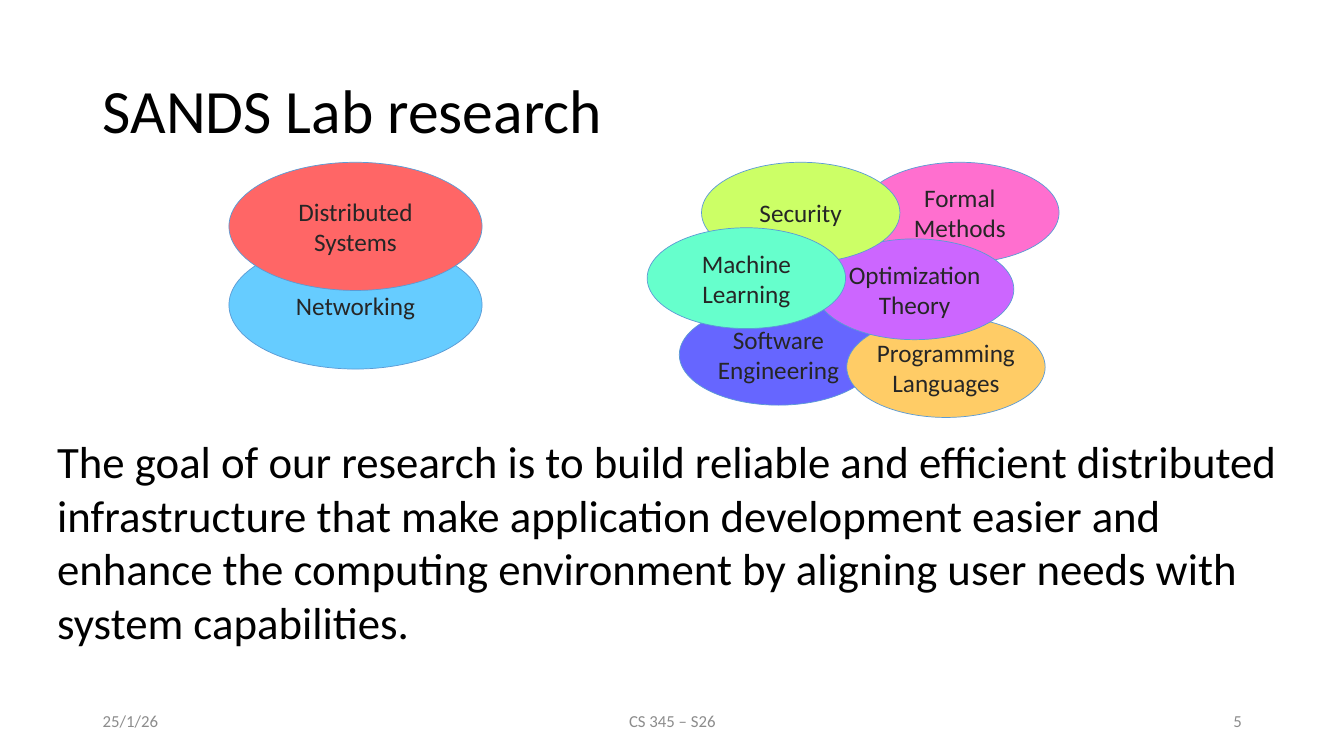
from pptx import Presentation
from pptx.dml.color import RGBColor
from pptx.enum.shapes import MSO_SHAPE as Shape
from pptx.enum.text import MSO_ANCHOR as Anchor, MSO_AUTO_SIZE as AutoSize, PP_ALIGN as Align
from pptx.util import Cm, Pt

BLACK = RGBColor(0x00, 0x00, 0x00)
CHARCOAL = RGBColor(0x26, 0x26, 0x26)
GREY = RGBColor(0x8C, 0x8C, 0x8C)
OUTLINE = RGBColor(0x5B, 0x9B, 0xD5)
INDIGO = RGBColor(0x66, 0x66, 0xFF)
SKY = RGBColor(0x66, 0xCC, 0xFF)
PINK = RGBColor(0xFF, 0x6F, 0xCF)
ORANGE = RGBColor(0xFF, 0xCC, 0x66)
PURPLE = RGBColor(0xCC, 0x66, 0xFF)
LIME = RGBColor(0xCC, 0xFF, 0x66)
MINT = RGBColor(0x66, 0xFF, 0xCC)
RED = RGBColor(0xFF, 0x66, 0x66)

deck = Presentation()
deck.slide_width, deck.slide_height = Cm(33.87), Cm(19.05)
page = deck.slides.add_slide(deck.slide_layouts[6])


def write(box, text, size, color, align, frame_format):
    frame = box.text_frame
    for name, value in {"word_wrap": True, **frame_format}.items():
        setattr(frame, name, value)
    para = frame.paragraphs[0]
    para.alignment = align
    span = para.add_run()
    span.text = text
    for name, value in {"name": "Calibri", "size": Pt(size)}.items():
        setattr(span.font, name, value)
    span.font.color.rgb = color
    return para


def add_text(place, text, size, color, align, frame_format):
    box = page.shapes.add_textbox(*[Cm(length) for length in place])
    return write(box, text, size, color, align, frame_format)


middle = {"vertical_anchor": Anchor.MIDDLE}
title = add_text((2.34, 1.02, 29.21, 3.68), "SANDS Lab research", 44, BLACK, Align.LEFT, middle)
title.line_spacing = 0.9

core_size = (6.38, 3.23)
related_size = (5, 2.54)
topics = [
    ("Software Engineering", 17.12, 7.67, related_size, INDIGO),
    ("Networking", 5.77, 6.07, core_size, SKY),
    ("Formal Methods", 21.69, 4.09, related_size, PINK),
    ("Programming Languages", 21.34, 7.98, related_size, ORANGE),
    ("Optimization Theory", 20.55, 6.02, related_size, PURPLE),
    ("Security", 17.68, 4.09, related_size, LIME),
    ("Machine Learning", 16.31, 5.74, related_size, MINT),
    ("Distributed Systems", 5.77, 4.09, core_size, RED),
]
topic_format = {**middle, "margin_left": 0, "margin_right": 0}
for topic, left, top, (width, height), color in topics:
    ellipse = page.shapes.add_shape(Shape.OVAL, Cm(left), Cm(top), Cm(width), Cm(height))
    ellipse.shadow.inherit = False
    ellipse.fill.solid()
    ellipse.fill.fore_color.rgb = color
    ellipse.line.color.rgb = OUTLINE
    ellipse.line.width = Pt(0.5)
    write(ellipse, topic, 18, CHARCOAL, Align.CENTER, topic_format)

goal = (
    "The goal of our research is to build reliable and efficient distributed "
    "infrastructure that make application development easier and enhance the "
    "computing environment by aligning user needs with system capabilities."
)
add_text((1.19, 10.8, 31.47, 5.74), goal, 32, BLACK, Align.LEFT,
         {"auto_size": AutoSize.SHAPE_TO_FIT_TEXT})

footers = [
    ("25/1/26", 2.34, 7.62, Align.LEFT),
    ("CS 345 – S26", 11.23, 11.43, Align.CENTER),
    ("5", 23.93, 7.62, Align.RIGHT),
]
for text, left, width, align in footers:
    add_text((left, 17.65, width, 1.02), text, 12, GREY, align, middle)

deck.save("out.pptx")
